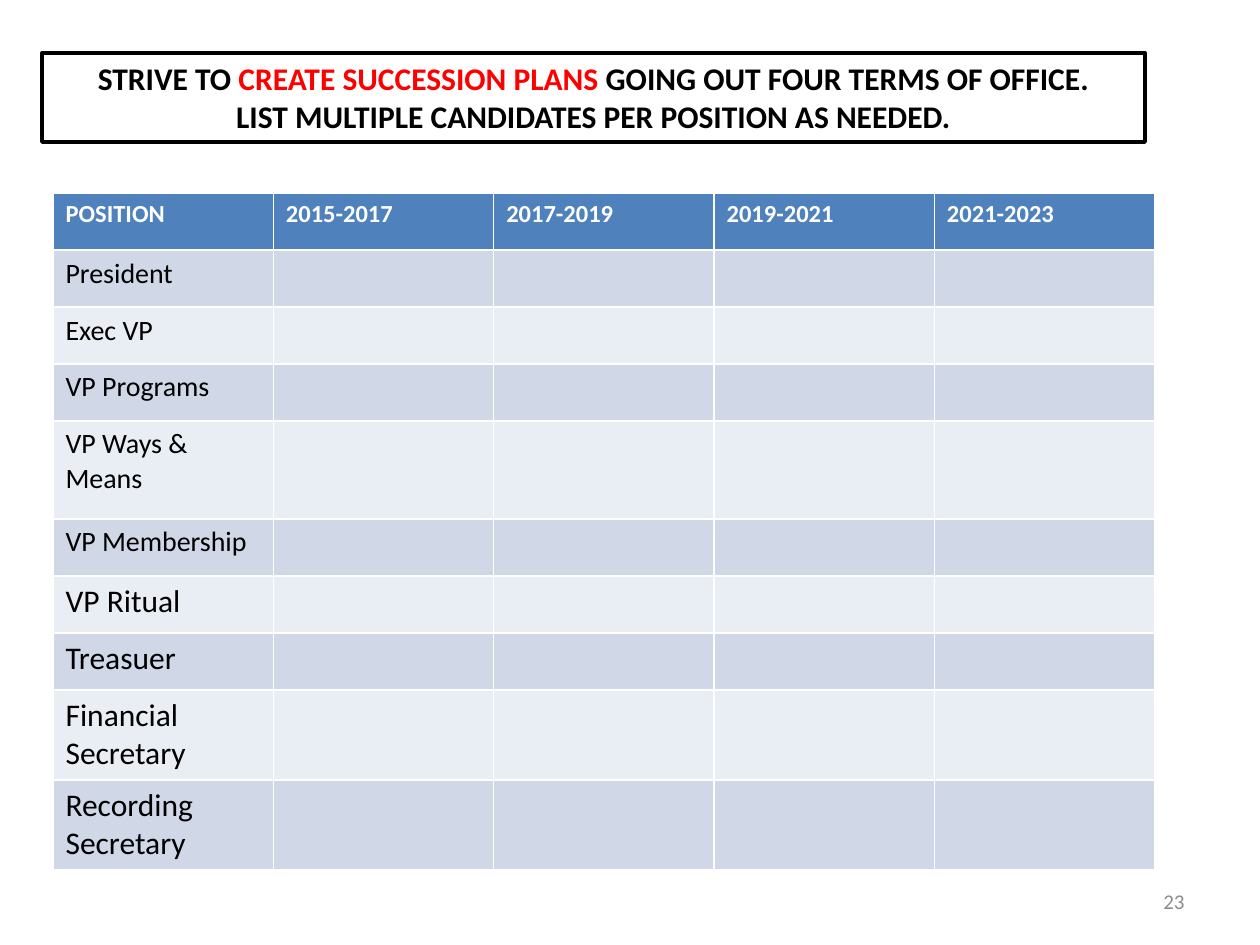
from pptx import Presentation
from pptx.dml.color import RGBColor
from pptx.enum.text import MSO_ANCHOR, MSO_AUTO_SIZE, PP_ALIGN
from pptx.util import Pt

CENTER, RIGHT = PP_ALIGN.CENTER, PP_ALIGN.RIGHT
TOP, MIDDLE = MSO_ANCHOR.TOP, MSO_ANCHOR.MIDDLE
NO_FIT = MSO_AUTO_SIZE.NONE
SCALE = 914400 / 126
TITLE_ONLY = 5

BLACK, WHITE, RED, GRAY = "000000", "FFFFFF", "FF0000", "8C8C8C"
HEAD, BANDS = "4F81BD", ("E9EDF4", "D0D8E8")


def px(n):
    return round(n * SCALE)


def rgb(code):
    return RGBColor.from_string(code)


class Deck:
    font = "Calibri"

    def __init__(self, wide, high):
        self.prs = Presentation()
        self.prs.slide_width, self.prs.slide_height = px(wide), px(high)
        self.slide = self.prs.slides.add_slide(self.prs.slide_layouts[TITLE_ONLY])

    def style(self, run, size, color, bold=False):
        run.font.name, run.font.size = self.font, Pt(size)
        run.font.bold, run.font.color.rgb = bold, rgb(color)

    def title(self, box, lines, size):
        shape = self.slide.shapes.title
        shape.left, shape.top, shape.width, shape.height = map(px, box)
        shape.line.color.rgb, shape.line.width = rgb(BLACK), Pt(2.25)
        frame = shape.text_frame
        frame.auto_size, frame.vertical_anchor = NO_FIT, TOP
        for i, line in enumerate(lines):
            para = frame.add_paragraph() if i else frame.paragraphs[0]
            para.alignment = CENTER
            for text, color in line:
                run = para.add_run()
                run.text = text
                self.style(run, size, color, True)

    def text(self, box, words, size, color):
        frame = self.slide.shapes.add_textbox(*map(px, box)).text_frame
        frame.word_wrap, frame.vertical_anchor = True, MIDDLE
        frame.text = words
        para = frame.paragraphs[0]
        para.alignment = RIGHT
        self.style(para.runs[0], size, color)

    def cell(self, cell, fill, words="", size=18, color=BLACK, bold=False):
        cell.fill.solid()
        cell.fill.fore_color.rgb = rgb(fill)
        if words:
            cell.text = words
            self.style(cell.text_frame.paragraphs[0].runs[0], size, color, bold)

    def table(self, box, heads, rows):
        shape = self.slide.shapes.add_table(len(rows) + 1, len(heads), *map(px, box))
        grid = shape.table
        grid.rows[0].height = px(57)
        for col, head in enumerate(heads):
            self.cell(grid.cell(0, col), HEAD, head, 14, WHITE, True)
        for i, (name, size, high) in enumerate(rows, 1):
            grid.rows[i].height = px(high)
            for col in range(len(heads)):
                self.cell(grid.cell(i, col), BANDS[i % 2], "" if col else name, size)


def main():
    deck = Deck(1260, 945)

    # Boxed heading
    deck.title((42, 53, 1103, 89), [
        [("STRIVE TO ", BLACK), ("CREATE SUCCESSION PLANS ", RED),
         ("GOING OUT FOUR TERMS OF OFFICE.", BLACK)],
        [("LIST MULTIPLE CANDIDATES PER POSITION AS NEEDED.", BLACK)],
    ], 18)

    # Succession table: two-year terms, then position, text size, row height
    terms = [f"{year}-{year + 2}" for year in range(2015, 2023, 2)]
    deck.table((53, 193, 1102, 675), ["POSITION"] + terms, [
        ("President", 16, 57),
        ("Exec VP", 16, 57),
        ("VP Programs", 16, 57),
        ("VP Ways & Means", 16, 98),
        ("VP Membership", 16, 57),
        ("VP Ritual", 18, 57),
        ("Treasuer", 18, 57),
        ("Financial Secretary", 18, 90),
        ("Recording Secretary", 18, 90),
    ])

    # Page number
    deck.text((903, 876, 294, 50), "23", 12, GRAY)

    deck.prs.save("out.pptx")


if __name__ == "__main__":
    main()
